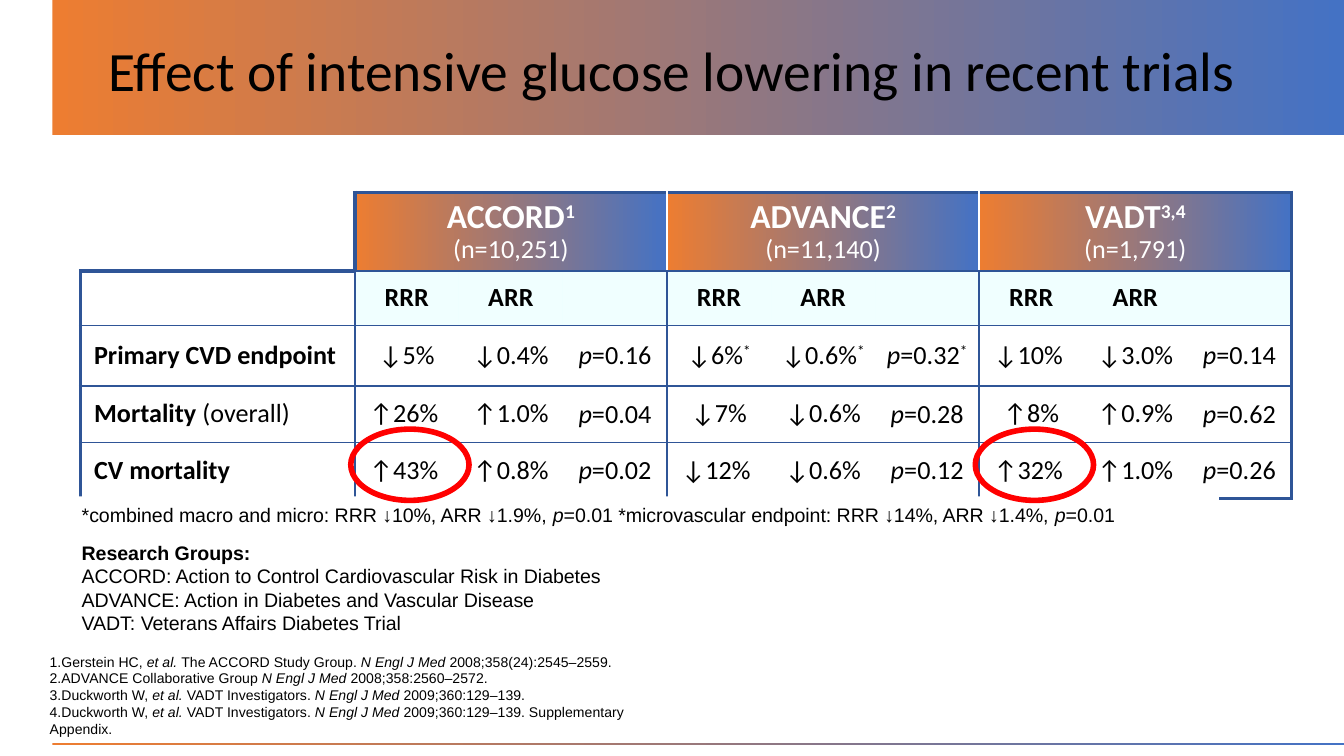
"""Build the slide comparing intensive glucose lowering in three trials."""
from lxml.etree import SubElement
from pptx import Presentation
from pptx.dml.color import RGBColor
from pptx.enum.shapes import MSO_SHAPE
from pptx.enum.text import MSO_ANCHOR, PP_ALIGN
from pptx.oxml.ns import qn
from pptx.util import Inches, Pt

ORANGE = RGBColor(0xED, 0x7D, 0x31)
BLUE = RGBColor(0x44, 0x72, 0xC4)
NAVY = RGBColor(0x2F, 0x55, 0x97)
AQUA = RGBColor(0xB8, 0xFF, 0xFF)
WHITE = RGBColor(0xFF, 0xFF, 0xFF)
BLACK = RGBColor(0, 0, 0)
RED = RGBColor(0xFF, 0, 0)
NO_GRID_STYLE = "{2D5ABB26-0587-4C30-8999-92F81FD0307C}"

prs = Presentation()
prs.slide_width = Inches(10)
prs.slide_height = prs.slide_width * 9 // 16
slide = prs.slides.add_slide(prs.slide_layouts[6])
shapes = slide.shapes


def place(left, top, width, height):
    """Turn percentages of the slide into lengths."""
    across, down = prs.slide_width / 100, prs.slide_height / 100
    return int(left * across), int(top * down), int(width * across), int(height * down)


def write(paragraph, runs, size, font="Calibri", color=BLACK):
    """Add (text, style) runs, where b is bold, i italic and ^ superscript."""
    for text, style in runs:
        run = paragraph.add_run()
        run.text = text
        run.font.size, run.font.name = Pt(size), font
        run.font.bold, run.font.italic = "b" in style, "i" in style
        run.font.color.rgb = color
        if "^" in style:
            run._r.get_or_add_rPr().set("baseline", "30000")


gradient_fills = []
for top, height in ((0, 17.8), (98.22, 0.36)):
    band = shapes.add_shape(MSO_SHAPE.RECTANGLE, *place(3.9, top, 96.1, height))
    band.shadow.inherit = False
    band.line.fill.background()
    gradient_fills.append(band.fill)

title = shapes.add_textbox(*place(7.1, 0, 86.2, 19.4)).text_frame
title.word_wrap = True
title.vertical_anchor = MSO_ANCHOR.MIDDLE
title.paragraphs[0].line_spacing = 0.9
write(title.paragraphs[0], [("Effect of intensive glucose lowering in recent trials", "")], 29.7)

trials = [("ACCORD", "1", "(n=10,251)"), ("ADVANCE", "2", "(n=11,140)"), ("VADT", "3,4", "(n=1,791)")]
labels = [
    [],
    [("Primary CVD endpoint", "b")],
    [("Mortality ", "b"), ("(overall)", "")],
    [("CV mortality", "b")],
]
results = [
    ["RRR", "ARR", ""] * 3,
    ["↓5%", "↓0.4%", "p=0.16", "↓6%*", "↓0.6%*", "p=0.32*", "↓10% ", "↓3.0%", "p=0.14"],
    ["↑26% ", "↑1.0%", "p=0.04", "↓7%", "↓0.6%", "p=0.28", "↑8%", "↑0.9%", "p=0.62"],
    ["↑43% ", "↑0.8%", "p=0.02", "↓12% ", "↓0.6%", "p=0.12", "↑32% ", "↑1.0%", "p=0.26"],
]
LABEL_SHARE, RESULT_SHARE = 20.4, 69.7 / 9
row_shares = [10.4, 7.2, 8.0, 7.5, 7.4]

table_box = place(6, 25.44, 90.1, sum(row_shares))
table = shapes.add_table(5, 10, *table_box).table
table._tbl.tblPr.find(qn("a:tableStyleId")).text = NO_GRID_STYLE
table.first_row = table.horz_banding = False
for index, column in enumerate(table.columns):
    column.width = place(0, 0, RESULT_SHARE if index else LABEL_SHARE, 0)[2]
for row, share in zip(table.rows, row_shares):
    row.height = place(0, 0, 0, share)[3]

thick, thin, divider = (NAVY, 2.25), (NAVY, 1), (WHITE, 1)
header_edges = {1: thick, 4: divider, 7: divider, 10: thick}
body_edges = {0: thick, 1: thin, 4: thin, 7: thin, 10: thick}
for first in (1, 4, 7):
    table.cell(0, first).merge(table.cell(0, first + 2))

for r in range(5):
    for c in range(10):
        cell = table.cell(r, c)
        if cell.is_spanned:
            continue
        verticals = body_edges if r else header_edges
        horizontals = {0: thick if c else None, 1: thin if c else thick, 5: thick}
        edges = {
            "a:lnL": verticals.get(c),
            "a:lnR": verticals.get(c + cell.span_width if cell.is_merge_origin else c + 1),
            "a:lnT": horizontals.get(r, thin),
            "a:lnB": horizontals.get(r + 1, thin),
        }
        properties = cell._tc.get_or_add_tcPr()
        for tag, edge in edges.items():
            line = SubElement(properties, qn(tag))
            if edge:
                line.set("w", str(Pt(edge[1])))
                SubElement(SubElement(line, qn("a:solidFill")), qn("a:srgbClr"), val=str(edge[0]))
            else:
                SubElement(line, qn("a:noFill"))

        cell.vertical_anchor = MSO_ANCHOR.MIDDLE
        paragraph = cell.text_frame.paragraphs[0]
        paragraph.line_spacing = 0.9
        if c:
            paragraph.alignment = PP_ALIGN.CENTER
        if r == 0 and c:
            gradient_fills.append(cell.fill)
            cell.vertical_anchor = MSO_ANCHOR.BOTTOM
            name, reference, patients = trials[c // 3]
            write(paragraph, [(name, "b"), (reference, "b^")], 18, color=WHITE)
            size_line = cell.text_frame.add_paragraph()
            size_line.alignment, size_line.line_spacing = PP_ALIGN.CENTER, 0.9
            write(size_line, [(patients, "")], 14, color=WHITE)
            continue
        cell.fill.solid()
        cell.fill.fore_color.rgb = AQUA if r == 1 and c else WHITE
        if r == 0:
            continue
        if c == 0:
            paragraph.space_before = Pt(2.8)
            write(paragraph, labels[r - 1], 14)
            continue
        value = results[r - 1][c - 1]
        if r == 1:
            SubElement(next(properties.iterchildren(qn("a:solidFill")))[0], qn("a:alpha"), val="20000")
            runs = [(value, "b")] if value else []
        else:
            cell.margin_left = cell.margin_right = Inches(0.05)
            number, star, _ = value.removeprefix("p").partition("*")
            runs = [("p", "i")] if value.startswith("p") else []
            runs += [(number, "")] + ([(star, "^")] if star else [])
        paragraph.line_spacing = 1.0 if value.startswith("p") else 0.9
        write(paragraph, runs, 14)

for fill in gradient_fills:
    fill.gradient()
    fill.gradient_angle = 0
    for stop, color, position in zip(fill.gradient_stops, (ORANGE, BLUE), (0, 1)):
        stop.color.rgb, stop.position = color, position

footnote = [[
    ("*combined macro and micro: RRR ↓10%, ARR ↓1.9%, ", ""), ("p", "i"),
    ("=0.01 *microvascular endpoint: RRR ↓14%, ARR ↓1.4%, ", ""), ("p", "i"), ("=0.01", ""),
]]
groups = [
    [("Research Groups:", "b")],
    [("ACCORD: Action to Control Cardiovascular Risk in Diabetes", "")],
    [("ADVANCE: Action in Diabetes and Vascular Disease", "")],
    [("VADT: Veterans Affairs Diabetes Trial", "")],
]
journal = ("N Engl J Med ", "i")
vadt = [("Duckworth W, ", ""), ("et al. ", "i"), ("VADT Investigators. ", ""), journal]
references = [
    [("Gerstein HC, ", ""), ("et al. ", "i"), ("The ACCORD Study Group. ", ""), journal,
     ("2008;358(24):2545–2559.", "")],
    [("ADVANCE Collaborative Group ", ""), journal, ("2008;358:2560–2572.", "")],
    vadt + [("2009;360:129–139.", "")],
    vadt + [("2009;360:129–139. Supplementary Appendix.", "")],
]
for content, size, area in (
    (footnote, 10.5, (5.1, 65.66, 85.6, 4.98)),
    (references, 7.5, (0, 87.7, 52.3, 12.3)),
    (groups, 10.5, (5.1, 70.64, 55.7, 14.41)),
):
    note = shapes.add_textbox(*place(*area))
    frame = note.text_frame
    frame.word_wrap = True
    if content is footnote:
        note.fill.solid()
        note.fill.fore_color.rgb = WHITE
    if content is references:
        frame.vertical_anchor = MSO_ANCHOR.BOTTOM
        frame.margin_left, frame.margin_bottom = Inches(0.37), Inches(0.14)
    for index, runs in enumerate(content):
        paragraph = frame.add_paragraph() if index else frame.paragraphs[0]
        if content is references:
            SubElement(paragraph._p.get_or_add_pPr(), qn("a:buAutoNum"), type="arabicPeriod")
        write(paragraph, runs, size, "Arial")

for columns_across in (0, 6):
    ring = shapes.add_shape(
        MSO_SHAPE.OVAL, *place(26.1 + columns_across * RESULT_SHARE, 56.76, 8.8, 9.43))
    ring.shadow.inherit = False
    ring.fill.background()
    ring.line.color.rgb, ring.line.width = RED, Pt(3)

prs.save("out.pptx")
